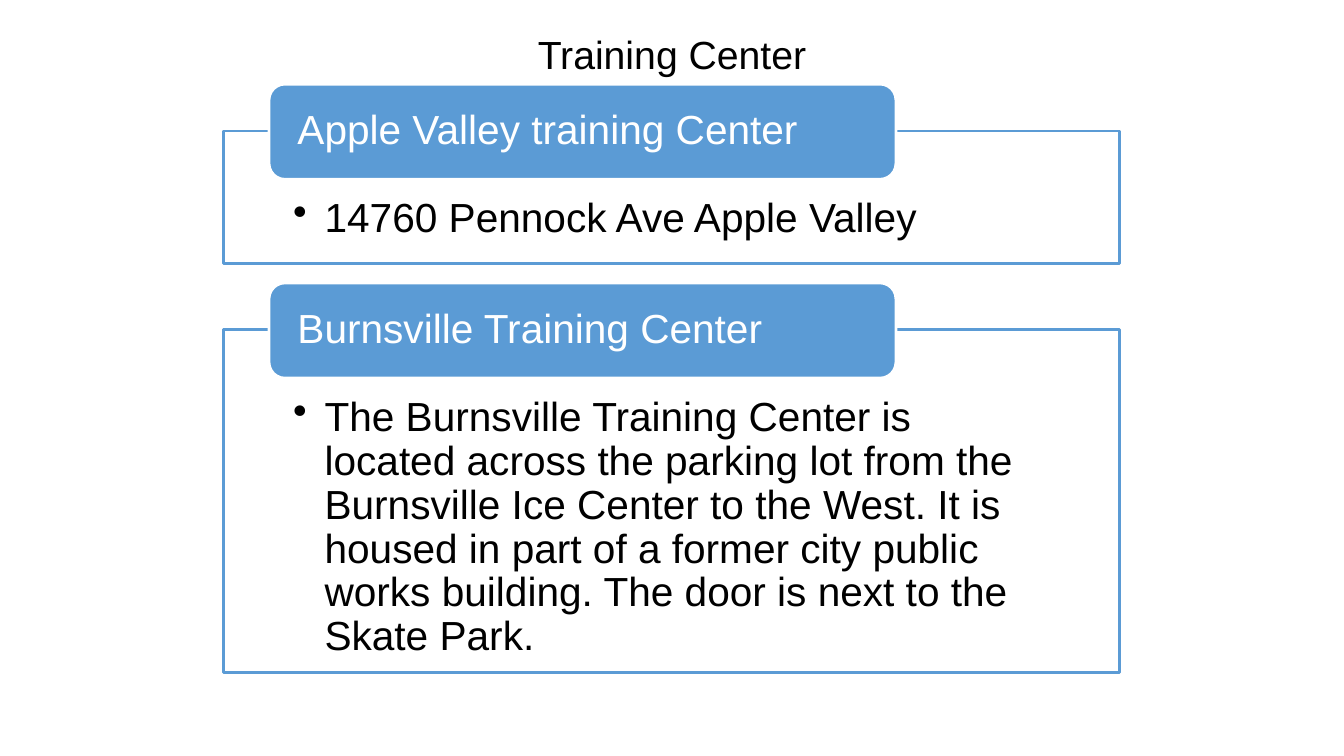
import pptx
import pptx.dml.color
import pptx.enum.shapes
import pptx.enum.text
import pptx.util
import lxml.etree

Cm = pptx.util.Cm
Pt = pptx.util.Pt
MSO_SHAPE = pptx.enum.shapes.MSO_SHAPE
ANCHOR = pptx.enum.text.MSO_ANCHOR
ALIGN = pptx.enum.text.PP_ALIGN

BLUE = pptx.dml.color.RGBColor(0x5B, 0x9B, 0xD5)
WHITE = pptx.dml.color.RGBColor(0xFF, 0xFF, 0xFF)
BLACK = pptx.dml.color.RGBColor(0x00, 0x00, 0x00)


def add_text(sp, text, size=29, color=BLACK, align=ALIGN.LEFT, anchor=ANCHOR.MIDDLE,
             margins=(0.25, 0.13, 0.25, 0.13), spacing=1.0, bullet=False):
    tf = sp.text_frame
    tf.word_wrap = True
    tf.vertical_anchor = anchor
    tf.margin_left, tf.margin_top, tf.margin_right, tf.margin_bottom = map(Cm, margins)
    p = tf.paragraphs[0]
    p.alignment = align
    p.line_spacing = spacing
    if bullet:
        pPr = p._p.get_or_add_pPr()
        pPr.set("marL", str(Cm(0.79)))
        pPr.set("indent", str(Cm(-0.79)))
        bu = lxml.etree.SubElement(pPr, pptx.oxml.ns.qn("a:buChar"))
        bu.set("char", "•")
    r = p.add_run()
    r.text = text
    r.font.name = "Arial"
    r.font.size = Pt(size)
    r.font.color.rgb = color


def add_box(s, kind, left, top, width, height, fill, line):
    sp = s.shapes.add_shape(kind, Cm(left), Cm(top), Cm(width), Cm(height))
    sp.shadow.inherit = False
    sp.fill.solid()
    sp.fill.fore_color.rgb = fill
    sp.line.color.rgb = line
    sp.line.width = Pt(2)
    return sp


prs = pptx.Presentation()
prs.slide_width = Cm(33.87)
prs.slide_height = Cm(19.05)
s = prs.slides.add_slide(prs.slide_layouts[6])

centers = [
    ("Apple Valley training Center", "14760 Pennock Ave Apple Valley", 3.35),
    ("Burnsville Training Center",
     "The Burnsville Training Center is located across the parking lot from the "
     "Burnsville Ice Center to the West. It is housed in part of a former city "
     "public works building. The door is next to the Skate Park.", 8.64),
]
tab_height = 2.4
gap = 1.66
top = 3.3
for name, details, height in centers:
    panel = add_box(s, MSO_SHAPE.RECTANGLE, 5.64, top, 22.58, height, WHITE, BLUE)
    add_text(panel, details, anchor=ANCHOR.TOP, margins=(1.75, 1.68, 1.75, 0.58),
             spacing=0.9, bullet=True)
    tab = add_box(s, MSO_SHAPE.ROUNDED_RECTANGLE, 6.78, top - tab_height / 2 + 0.02,
                  15.8, tab_height, BLUE, WHITE)
    add_text(tab, name, color=WHITE, margins=(0.6, 0, 0.6, 0), spacing=0.9)
    top += height + gap

title = s.shapes.add_textbox(Cm(0), Cm(0.7), Cm(33.87), Cm(1.33))
add_text(title, "Training Center", size=28, align=ALIGN.CENTER)

prs.save("out.pptx")
